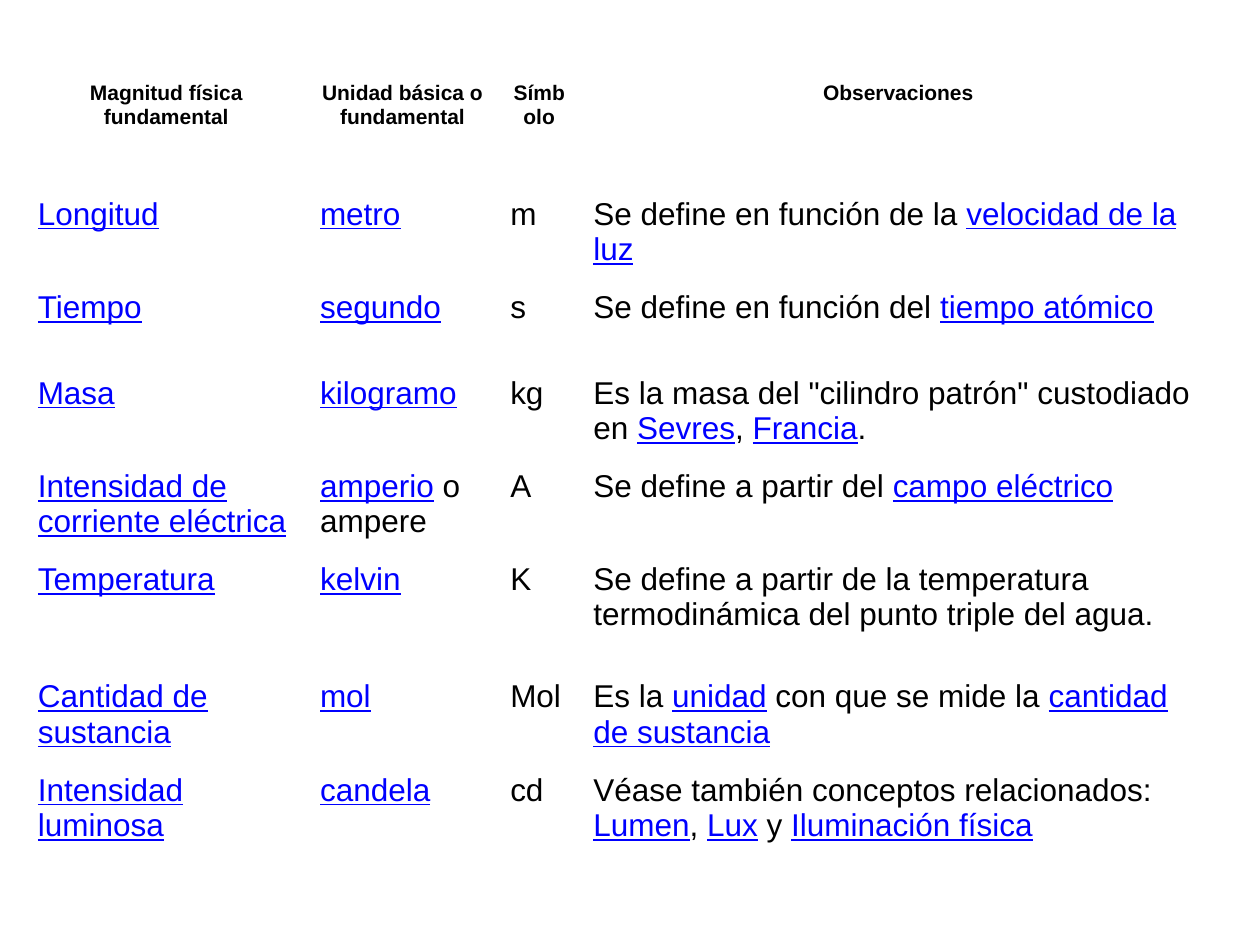
from pptx import Presentation
from pptx.dml.color import RGBColor
from pptx.enum.text import PP_ALIGN
from pptx.util import Pt

BLACK = RGBColor(0x00, 0x00, 0x00)
LINK_BLUE = RGBColor(0x00, 0x00, 0xFF)
CENTER, LEFT = PP_ALIGN.CENTER, PP_ALIGN.LEFT
BLANK_LAYOUT = 6

# Table geometry in points
TABLE_LEFT, TABLE_TOP = 14.4, 43.2
COLUMN_WIDTHS = [161.3, 108.7, 47.5, 362.9]
ROW_HEIGHTS = [65.5, 53.3, 49, 53.3, 53.3, 67, 53.3, 70.6]

HEADER = ["Magnitud física fundamental", "Unidad básica o fundamental",
          "Símbolo", "Observaciones"]

# Text between bars is shown in the link style
UNITS = [
    ["|Longitud|", "|metro|", "m",
     "Se define en función de la |velocidad de la luz|"],
    ["|Tiempo|", "|segundo|", "s",
     "Se define en función del |tiempo atómico|"],
    ["|Masa|", "|kilogramo|", "kg",
     'Es la masa del "cilindro patrón" custodiado en |Sevres|, |Francia|.'],
    ["|Intensidad de corriente eléctrica|", "|amperio| o ampere", "A",
     "Se define a partir del |campo eléctrico|"],
    ["|Temperatura|", "|kelvin|", "K",
     "Se define a partir de la temperatura termodinámica "
     "del punto triple del agua."],
    ["|Cantidad de sustancia|", "|mol|", "Mol",
     "Es la |unidad| con que se mide la |cantidad de sustancia|"],
    ["|Intensidad luminosa|", "|candela|", "cd",
     "Véase también conceptos relacionados: "
     "|Lumen|, |Lux| y |Iluminación física|"],
]


class SlideBuilder:
    """Holds the text style and the current slide."""

    font_name = "Arial"
    header_size = Pt(12)
    body_size = Pt(18)

    def __init__(self, slide):
        self.slide = slide

    def add_table(self, left, top, widths, heights, rows):
        frame = self.slide.shapes.add_table(
            len(heights), len(widths), Pt(left), Pt(top),
            Pt(sum(widths)), Pt(sum(heights)))
        table = frame.table
        table.first_row = table.horz_banding = False
        for column, width in zip(table.columns, widths):
            column.width = Pt(width)
        for row, height in zip(table.rows, heights):
            row.height = Pt(height)
        for row_index, texts in enumerate(rows):
            for column_index, text in enumerate(texts):
                cell = table.cell(row_index, column_index)
                self.fill_cell(cell, text, is_header=row_index == 0)

    def fill_cell(self, cell, text, is_header):
        cell.fill.background()
        paragraph = cell.text_frame.paragraphs[0]
        paragraph.alignment = CENTER if is_header else LEFT
        for index, part in enumerate(text.split("|")):
            if part:
                self.add_run(paragraph, part, is_header, is_link=index % 2 == 1)

    def add_run(self, paragraph, text, is_header, is_link):
        run = paragraph.add_run()
        run.text = text
        font = run.font
        font.name = self.font_name
        font.size = self.header_size if is_header else self.body_size
        font.bold = is_header
        font.underline = is_link
        font.color.rgb = LINK_BLUE if is_link else BLACK


def main():
    presentation = Presentation()
    presentation.slide_width, presentation.slide_height = Pt(720), Pt(540)
    slide = presentation.slides.add_slide(
        presentation.slide_layouts[BLANK_LAYOUT])

    # Table of the base units
    builder = SlideBuilder(slide)
    builder.add_table(TABLE_LEFT, TABLE_TOP, COLUMN_WIDTHS, ROW_HEIGHTS,
                      [HEADER] + UNITS)

    presentation.save("out.pptx")


if __name__ == "__main__":
    main()
